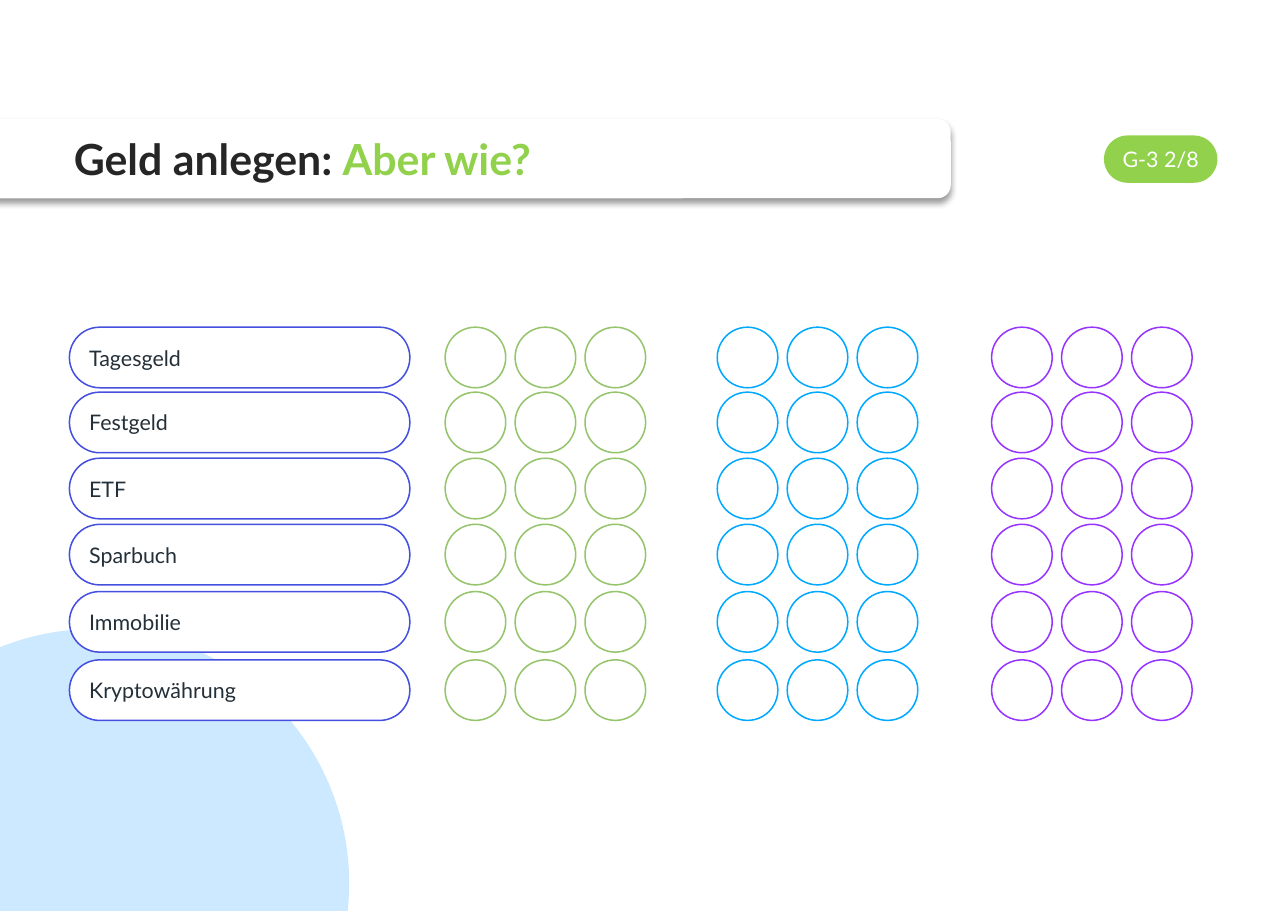
"""Worksheet slide that rates six ways to invest money on three scales."""
import math
from lxml import etree
from pptx import Presentation
from pptx.dml.color import RGBColor
from pptx.enum import shapes, text
from pptx.oxml import ns
from pptx.util import Inches, Pt

WHITE = RGBColor(0xFF, 0xFF, 0xFF)
SKY = RGBColor(0xCD, 0xE9, 0xFF)
INK = RGBColor(0x26, 0x26, 0x26)
SLATE = RGBColor(0x24, 0x30, 0x39)
LIME = RGBColor(0x91, 0xD1, 0x4C)
INDIGO = RGBColor(0x46, 0x50, 0xDF)
GREEN = RGBColor(0x95, 0xC4, 0x6C)
BLUE = RGBColor(0x00, 0xA9, 0xFF)
PURPLE = RGBColor(0x97, 0x35, 0xFF)
ROUND = shapes.MSO_SHAPE.ROUNDED_RECTANGLE
OVAL = shapes.MSO_SHAPE.OVAL

deck = Presentation()
deck.slide_width, deck.slide_height = Inches(11.69), Inches(8.27)
slide = deck.slides.add_slide(deck.slide_layouts[5])


def draw(kind, x, y, w, h, fill=None, line=None, bend=0.5):
    shape = slide.shapes.add_shape(kind, Inches(x), Inches(y), Inches(w), Inches(h))
    shape.shadow.inherit = False
    if kind == ROUND:
        shape.adjustments[0] = bend
    if fill is None:
        shape.fill.background()
    else:
        shape.fill.solid()
        shape.fill.fore_color.rgb = fill
    if line is None:
        shape.line.fill.background()
    else:
        shape.line.color.rgb = line
        shape.line.width = Pt(1)
    return shape


def label(shape, words, color, align):
    shape.text_frame.word_wrap = True
    shape.text_frame.vertical_anchor = text.MSO_ANCHOR.MIDDLE
    para = shape.text_frame.paragraphs[0]
    para.text = words
    para.alignment = align
    para.font.name = "Lato"
    para.font.size = Pt(14)
    para.font.color.rgb = color


mid_x, mid_y, radius = 0.86, 8.02, 2.31
start = math.asin((mid_y - 8.27) / radius)
stop = math.acos(-mid_x / radius)
steps = 60
angles = [start + (stop - start) * i / steps for i in range(steps + 1)]
arc = [(Inches(mid_x + radius * math.cos(a)), Inches(mid_y - radius * math.sin(a)))
       for a in angles]
path = slide.shapes.build_freeform(0, Inches(8.27))
path.add_line_segments(arc, close=True)
disc = path.convert_to_shape()
disc.shadow.inherit = False
disc.fill.solid()
disc.fill.fore_color.rgb = SKY
disc.line.fill.background()

banner = draw(ROUND, -0.83, 1.08, 9.46, 0.72, WHITE, bend=0.167)
effects = banner.element.spPr.find(ns.qn("a:effectLst"))
shade = etree.SubElement(effects, ns.qn("a:outerShdw"), blurRad=str(Pt(4)),
                         dist=str(Pt(3)), dir="5400000", algn="t", rotWithShape="0")
black = etree.SubElement(shade, ns.qn("a:srgbClr"), val="000000")
etree.SubElement(black, ns.qn("a:alpha"), val="40000")

title = slide.shapes.title
banner.element.addnext(title.element)
title.left, title.top = Inches(0.67), Inches(1.08)
title.width, title.height = Inches(7.8), Inches(0.72)
frame = title.text_frame
frame.margin_left = frame.margin_right = 0
frame.word_wrap = True
frame.auto_size = text.MSO_AUTO_SIZE.NONE
frame.vertical_anchor = text.MSO_ANCHOR.MIDDLE
head = frame.paragraphs[0]
head.alignment = text.PP_ALIGN.LEFT
head.font.name = "Lato"
head.font.size = Pt(28)
head.font.bold = True
for words, color in (("Geld anlegen: ", INK), ("Aber wie?", LIME)):
    run = head.add_run()
    run.text = words
    run.font.color.rgb = color

badge = draw(ROUND, 10.02, 1.23, 1.03, 0.43, LIME)
label(badge, "G-3 2/8", WHITE, text.PP_ALIGN.CENTER)

rows = (
    ("Tagesgeld", 2.97, None),
    ("Festgeld", 3.56, None),
    ("ETF", 4.16, None),
    ("Sparbuch", 4.76, WHITE),
    ("Immobilie", 5.37, WHITE),
    ("Kryptowährung", 5.99, WHITE),
)
scales = ((4.04, GREEN), (6.51, BLUE), (9, PURPLE))
for name, top, fill in rows:
    pill = draw(ROUND, 0.63, top, 3.09, 0.55, fill, INDIGO)
    label(pill, name, SLATE, text.PP_ALIGN.LEFT)
    for left, color in scales:
        for i in range(3):
            draw(OVAL, left + i * 0.635, top, 0.55, 0.55, line=color)

deck.save("out.pptx")
